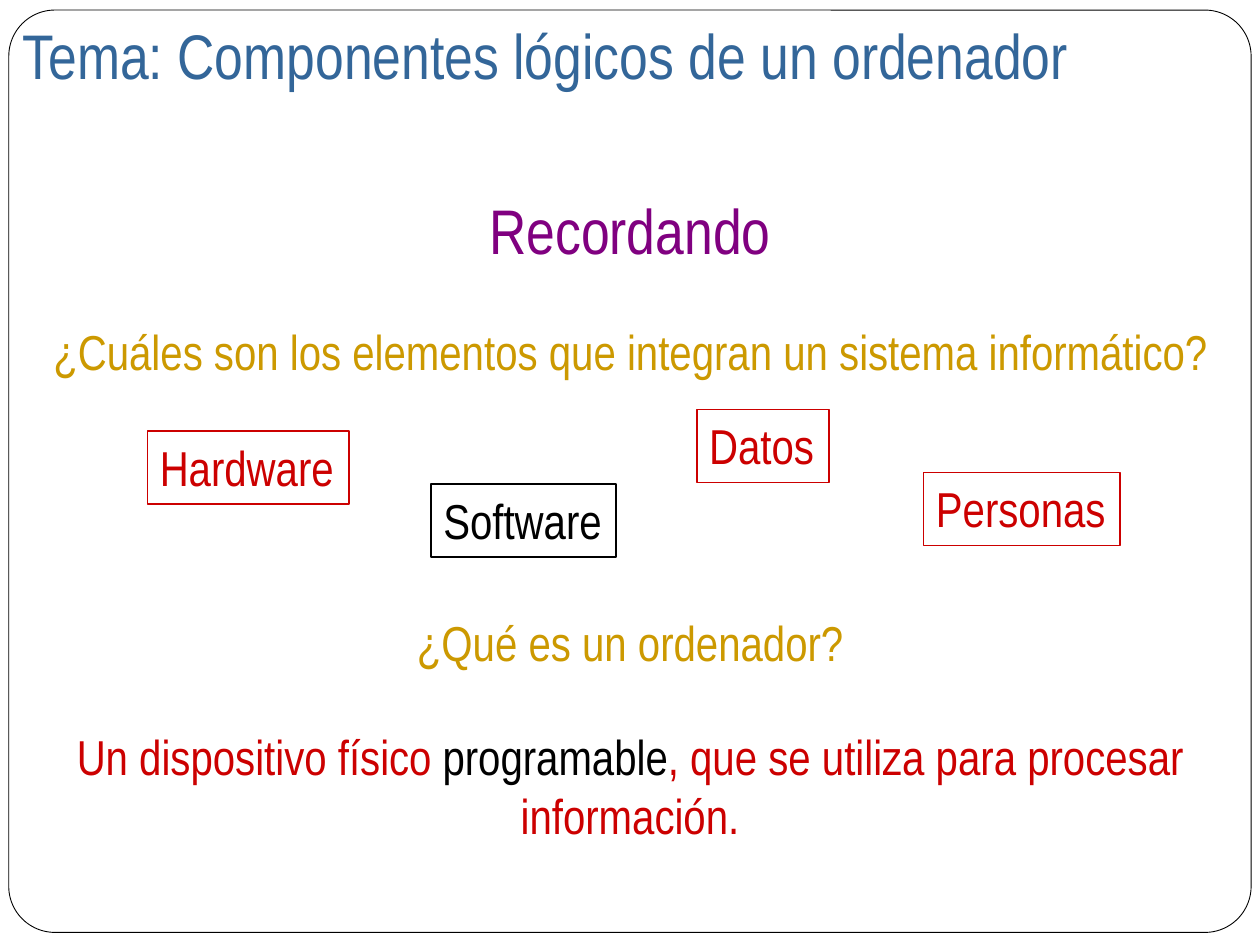
from dataclasses import dataclass

from pptx import Presentation
from pptx.dml.color import RGBColor
from pptx.enum import shapes, text
from pptx.util import Inches, Pt


@dataclass(frozen=True)
class Theme:
    font: str = "Arial Narrow"
    heading: int = 36
    body: int = 28
    white: str = "FFFFFF"
    black: str = "000000"
    blue: str = "336699"
    purple: str = "800080"
    gold: str = "CC9900"
    red: str = "CC0000"


THEME = Theme()
LEFT, CENTER = text.PP_ALIGN.LEFT, text.PP_ALIGN.CENTER


def rgb(color):
    return RGBColor.from_string(color)


def write(sp, *runs, size=THEME.body, align=CENTER, wrap=True):
    tf = sp.text_frame
    tf.word_wrap = wrap
    tf.auto_size = text.MSO_AUTO_SIZE.SHAPE_TO_FIT_TEXT
    tf.vertical_anchor = text.MSO_ANCHOR.TOP
    p = tf.paragraphs[0]
    p.alignment = align
    for words, color in runs:
        r = p.add_run()
        r.text = words
        r.font.name = THEME.font
        r.font.size = Pt(size)
        r.font.color.rgb = rgb(color)


def add_box(s, kind, box, line, width):
    sp = s.shapes.add_shape(kind, *map(Inches, box))
    sp.shadow.inherit = False
    sp.fill.background()
    sp.line.color.rgb = rgb(line)
    sp.line.width = Pt(width)
    return sp


def add_frame(s):
    sp = add_box(s, shapes.MSO_SHAPE.ROUNDED_RECTANGLE, (0.07, 0.08, 9.86, 7.32), THEME.black, 0.5)
    sp.adjustments[0] = 0.05
    sp.fill.solid()
    sp.fill.fore_color.rgb = rgb(THEME.white)
    s.shapes.title.element.addprevious(sp.element)


def add_title(s, words):
    sp = s.shapes.title
    sp.left, sp.top, sp.width, sp.height = map(Inches, (0.08, 0.08, 9.75, 0.7))
    write(sp, (words, THEME.blue), size=THEME.heading, align=LEFT)


def add_centered(s, top, width, height, *runs, size=THEME.body):
    box = ((10 - width) / 2, top, width, height)
    write(s.shapes.add_textbox(*map(Inches, box)), *runs, size=size)


def add_label(s, words, left, top, width, color):
    sp = add_box(s, shapes.MSO_SHAPE.RECTANGLE, (left, top, width, 0.58), color, 1)
    write(sp, (words, color), align=LEFT, wrap=False)


def main():
    prs = Presentation()
    prs.slide_width, prs.slide_height = Inches(10), Inches(7.5)
    s = prs.slides.add_slide(prs.slide_layouts.get_by_name("Title Only"))

    add_frame(s)
    add_title(s, "Tema: Componentes lógicos de un ordenador")
    add_centered(s, 1.47, 9.67, 0.7, ("Recordando", THEME.purple), size=THEME.heading)
    add_centered(s, 2.5, 9.5, 0.57,
                 ("¿Cuáles son los elementos que integran un sistema informático?", THEME.gold))
    for label in (
        ("Hardware", 1.17, 3.42, 1.6, THEME.red),
        ("Software", 3.42, 3.84, 1.47, THEME.black),
        ("Datos", 5.53, 3.25, 1.05, THEME.red),
        ("Personas", 7.33, 3.75, 1.56, THEME.red),
    ):
        add_label(s, *label)
    add_centered(s, 4.81, 9.5, 0.57, ("¿Qué es un ordenador?", THEME.gold))
    add_centered(s, 5.72, 9.67, 1.03,
                 ("Un dispositivo físico ", THEME.red),
                 ("programable", THEME.black),
                 (", que se utiliza para procesar información.", THEME.red))
    prs.save("out.pptx")


if __name__ == "__main__":
    main()
